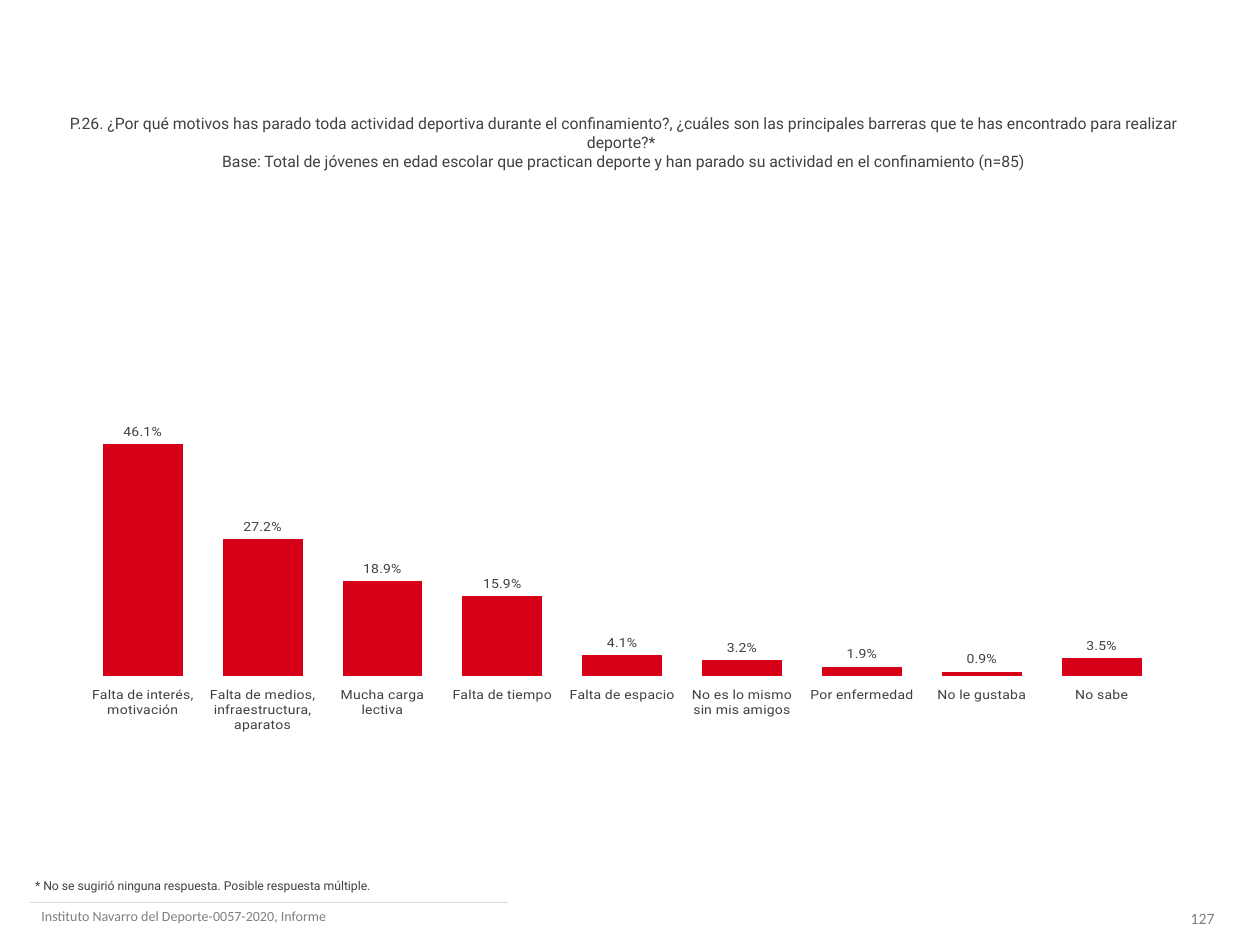
from lxml.etree import SubElement
from pptx import Presentation
from pptx.chart.data import CategoryChartData
from pptx.dml.color import RGBColor
from pptx.enum.chart import XL_CHART_TYPE, XL_LABEL_POSITION as LabelPos, XL_TICK_MARK as Tick
from pptx.enum.text import MSO_ANCHOR as Anchor, MSO_AUTO_SIZE as AutoSize, PP_ALIGN as Align
from pptx.oxml.ns import qn
from pptx.util import Inches, Pt

RED = RGBColor(0xD6, 0x00, 0x19)
DARK = RGBColor(0x40, 0x40, 0x40)
GREY = RGBColor(0x80, 0x80, 0x80)
RULE = RGBColor(0xD9, 0xD9, 0xD9)
LEFT, WIDTH = Inches(0.44), Inches(9.07)  # column shared by question and chart

prs = Presentation()
prs.slide_width, prs.slide_height = Inches(10), Inches(7.5)
s = prs.slides.add_slide(prs.slide_layouts[5])


def write(sp, text, font, size, color, align=Align.LEFT, anchor=Anchor.TOP, wrap=True):
    tf = sp.text_frame
    tf.text = text
    tf.word_wrap, tf.vertical_anchor, tf.auto_size = wrap, anchor, AutoSize.NONE
    for p in tf.paragraphs:
        p.alignment = align
        for r in p.runs:
            r.font.name, r.font.size, r.font.color.rgb = font, Pt(size), color


# Question and base
title = s.shapes.title
title.left, title.top, title.width, title.height = LEFT, Inches(0.85), WIDTH, Inches(0.56)
write(title, "P.26. ¿Por qué motivos has parado toda actividad deportiva durante el confinamiento?, "
      "¿cuáles son las principales barreras que te has encontrado para realizar deporte?* \n"
      "Base: Total de jóvenes en edad escolar que practican deporte y han parado su actividad "
      "en el confinamiento (n=85)", "Roboto", 9, DARK, Align.CENTER)
title.text_frame.margin_left = Inches(0.04)

# Column chart of reasons
reasons = {
    "Falta de interés, motivación": 0.461,
    "Falta de medios, infraestructura, aparatos": 0.272,
    "Mucha carga lectiva": 0.189,
    "Falta de tiempo": 0.159,
    "Falta de espacio": 0.041,
    "No es lo mismo sin mis amigos": 0.032,
    "Por enfermedad": 0.019,
    "No le gustaba": 0.009,
    "No sabe": 0.035,
}
data = CategoryChartData(number_format="0.0%")
data.categories = list(reasons)
data.add_series("Series 1", list(reasons.values()))
chart = s.shapes.add_chart(XL_CHART_TYPE.COLUMN_CLUSTERED, LEFT, Inches(1.37),
                           WIDTH, Inches(4.45), data).chart
chart.has_legend = chart.has_title = False
chart.font.name, chart.font.size, chart.font.color.rgb = "Roboto", Pt(8), DARK

cat_axis, val_axis = chart.category_axis, chart.value_axis
cat_axis.major_tick_mark = Tick.OUTSIDE
cat_axis.format.line.fill.background()
val_axis.visible = val_axis.has_major_gridlines = False
val_axis.minimum_scale, val_axis.maximum_scale, val_axis.major_unit = 0, 1, 0.25
val_axis.tick_labels.number_format = "###0.0%"
val_axis.tick_labels.number_format_is_linked = False

plot = chart.plots[0]
plot.gap_width, plot.vary_by_categories = 50, False
fill = plot.series[0].format.fill
fill.solid()
fill.fore_color.rgb = RED
labels = plot.series[0].data_labels
labels.show_value, labels.position = True, LabelPos.OUTSIDE_END
labels.number_format, labels.number_format_is_linked = "0.0%", False

# Plot area position, as shares of the chart
area = chart.element.find(".//" + qn("c:plotArea"))
layout = area.find(qn("c:layout"))
if layout is None:
    layout = area.makeelement(qn("c:layout"))
    area.insert(0, layout)
manual = SubElement(layout, qn("c:manualLayout"))
for tag, val in (("layoutTarget", "inner"), ("xMode", "edge"), ("yMode", "edge"),
                 ("x", "0.024"), ("y", "0"), ("w", "0.944"), ("h", "1")):
    SubElement(manual, qn("c:" + tag)).set("val", val)

# Footnote, footer and page number
for text, box, *style in (
    ("* No se sugirió ninguna respuesta. Posible respuesta múltiple.",
     (0.18, 6.92, 2.9, 0.22), "Roboto", 7, DARK, Align.LEFT, Anchor.TOP, False),
    ("Instituto Navarro del Deporte-0057-2020, Informe",
     (0.23, 7.15, 3.19, 0.24), "Calibri", 8, GREY),
    ("127", (9.21, 7.16, 0.67, 0.25), "Calibri", 9, GREY, Align.CENTER, Anchor.MIDDLE),
):
    write(s.shapes.add_textbox(*map(Inches, box)), text, *style)

# Footer rule
rule = s.shapes.add_connector(1, Inches(0.24), Inches(7.16), Inches(4.03), Inches(7.16))
rule.line.color.rgb, rule.line.width = RULE, Pt(0.5)
SubElement(rule.element.spPr, qn("a:effectLst"))

prs.save("out.pptx")
